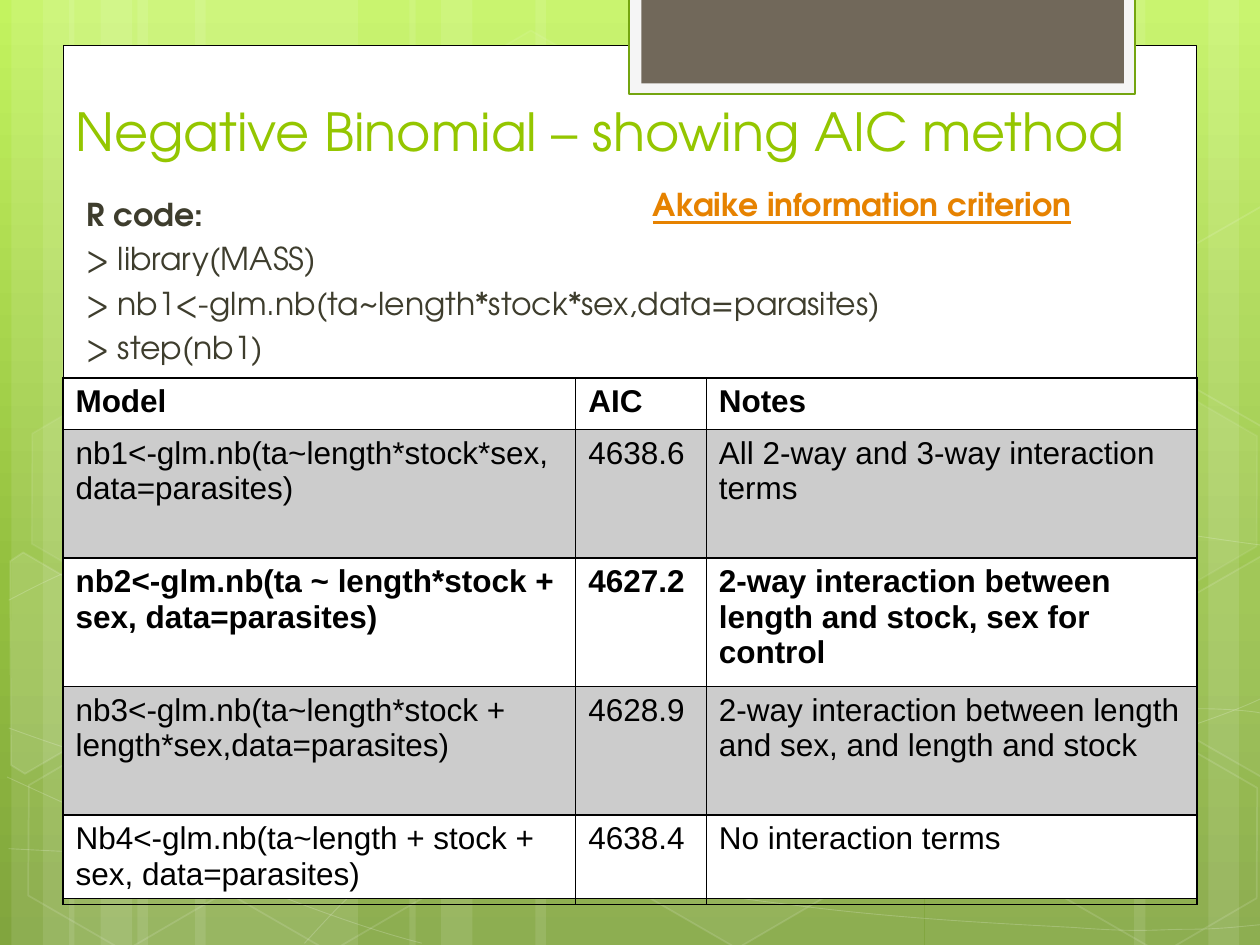
from copy import deepcopy
from math import cos, radians, sin

from lxml import etree
from pptx import Presentation
from pptx.dml.color import RGBColor
from pptx.enum import shapes, text
from pptx.oxml.ns import qn
from pptx.util import Pt

WHITE, BLACK = RGBColor(0xFF, 0xFF, 0xFF), RGBColor(0, 0, 0)
GREEN, DARK_GREEN = RGBColor(0x94, 0xC6, 0x00), RGBColor(0x74, 0xA5, 0x10)
OLIVE, ORANGE = RGBColor(0x3E, 0x3D, 0x2D), RGBColor(0xE6, 0x82, 0x00)
PALE, TAUPE = RGBColor(0xF5, 0xF5, 0xF5), RGBColor(0x71, 0x68, 0x5A)
BACKGROUND = [(0, RGBColor(0xC3, 0xF3, 0x5F)), (0.62, RGBColor(0x93, 0xBF, 0x3F)),
              (1, RGBColor(0x81, 0xA5, 0x3E))]
HEAD_FONT, TABLE_FONT = "TeX Gyre Adventor", "Arial"

TITLE = "Negative Binomial – showing AIC method"
CODE = ["R code:", "> library(MASS)",
        "> nb1<-glm.nb(ta~length*stock*sex,data=parasites)", "> step(nb1)"]
CALLOUT = "Akaike information criterion"
MODELS = [
    ("Model", "AIC", "Notes"),
    ("nb1<-glm.nb(ta~length*stock*sex, data=parasites)", "4638.6",
     "All 2-way and 3-way interaction terms"),
    ("nb2<-glm.nb(ta ~ length*stock + sex, data=parasites)", "4627.2",
     "2-way interaction between length and stock, sex for control"),
    ("nb3<-glm.nb(ta~length*stock + length*sex,data=parasites)", "4628.9",
     "2-way interaction between length and sex, and length and stock"),
    ("Nb4<-glm.nb(ta~length + stock + sex, data=parasites)", "4638.4", "No interaction terms"),
]
BOLD_ROWS, SHADED_ROWS = {0, 2}, {1, 3}
COL_WIDTHS = [293, 74.6, 280.4]
ROW_HEIGHTS = [29.5, 73.4, 73.4, 73.4, 51.2]

# Stripes are (left, width)
STRIPES = [(78.5, 126), (6.5, 36), (24.5, 60), (111.5, 126), (39.5, 36), (57.5, 60),
           (528.5, 126), (690.5, 36), (648, 60), (306, 222), (234, 36), (252, 60)]
# Cubic curves: a start point, then two handles and an end point per segment
CURVES = [
    [(5, 485), (44, 487), (83, 489), (137, 488), (191, 487), (258, 486), (330, 479),
     (402, 472), (504, 458), (570, 444), (636, 431), (703, 409), (725, 397)],
    [(5, 343), (26, 332), (47, 321), (87, 310), (128, 300), (186, 284), (250, 279),
     (314, 274), (392, 273), (471, 279), (550, 284), (682, 307), (725, 312)],
    [(4, 444), (91, 484), (178, 523), (241, 539)],
    [(5, 416), (27, 424), (50, 432), (92, 444), (134, 454), (197, 472), (257, 485),
     (317, 497), (392, 510), (452, 517), (512, 525), (576, 528), (614, 530),
     (652, 533), (662, 531), (680, 531), (699, 531), (712, 529), (725, 528)],
    [(174, 539), (187, 525), (200, 510), (217, 498), (235, 484), (259, 470), (279, 460),
     (300, 450), (312, 446), (338, 438), (364, 431), (413, 421), (438, 416),
     (464, 411), (467, 411), (490, 410), (512, 408), (547, 405), (572, 405),
     (596, 404), (638, 405), (638, 405), (660, 405), (670, 405), (686, 405),
     (699, 405), (711, 406), (718, 407), (722, 408), (724, 407), (724, 408)],
]
# Hexagons are (left, top, fill opacity, line opacity) in percent
TILT = 30
HEXAGONS = [(240.5, 26, 4, 8), (358, 424, 6, 12), (8, 425.5, 0, 12), (10, 224.5, 7, 8),
            (125.5, 426, 0, 12), (542, 326, 10, 12), (600.5, 427, 0, 12), (600.5, 226, 7, 8)]
# Hexagons cut off by the slide edge are (centre, corners, fill opacity)
CUT_HEXAGONS = [
    ((26, 386), [(6, 320.5), (13.5, 315.5), (69, 348), (68.5, 410.5), (14.5, 442),
                 (6.5, 437)], 10),
    ((709, 374.5), [(666.5, 349), (721.5, 317.5), (726.5, 321), (726.5, 441.5),
                    (721.5, 444), (666.5, 412.5)], 4),
    ((709, 173.5), [(666.5, 149), (721.5, 117.5), (727, 121), (726.5, 241),
                    (721.5, 244), (666.5, 212.5)], 0),
]
# Panel and tab are (left, top, width, height, fill, line, line width)
PANELS = [(36, 26, 648, 487.5, WHITE, BLACK, 0.5),
          (359.3, -1.4, 289.5, 55.4, PALE, DARK_GREEN, 1.25),
          (366.5, -1.4, 275.8, 49, TAUPE, None, 0)]


def set_alpha(fill, percent):
    color = fill._xPr.find(qn("a:solidFill"))[0]
    etree.SubElement(color, qn("a:alpha"), val=str(percent * 1000))


def paint(sp, fill=None, opacity=100, line=None, width=1, line_opacity=100):
    sp.shadow.inherit = False
    if line is not None:
        sp.line.width = Pt(width)
    for part, color, alpha in ((sp.fill, fill, opacity), (sp.line.fill, line, line_opacity)):
        if color is None or alpha == 0:
            part.background()
            continue
        part.solid()
        part.fore_color.rgb = color
        if alpha < 100:
            set_alpha(part, alpha)


def add_preset(kind, x, y, w, h, **style):
    sp = s.shapes.add_shape(kind, Pt(x), Pt(y), Pt(w), Pt(h))
    paint(sp, **style)
    return sp


def add_outline(points, close, **style):
    pts = [(Pt(x), Pt(y)) for x, y in points]
    builder = s.shapes.build_freeform(*pts[0])
    builder.add_line_segments(pts[1:], close=close)
    sp = builder.convert_to_shape()
    paint(sp, **style)
    return sp


def bend(sp):
    """Turn every three straight segments into one cubic segment."""
    lines = list(sp._element.iter(qn("a:lnTo")))
    for first, second, end in zip(lines[::3], lines[1::3], lines[2::3]):
        first.tag = qn("a:cubicBezTo")
        for line in (second, end):
            first.append(line[0])
            line.getparent().remove(line)


def turn_back(point, centre):
    dx, dy = point[0] - centre[0], point[1] - centre[1]
    c, n = cos(radians(TILT)), sin(radians(TILT))
    return centre[0] + dx * c + dy * n, centre[1] - dx * n + dy * c


def add_run(p, words, font, size, color, bold=False):
    r = p.add_run()
    r.text = words
    r.font.name, r.font.size, r.font.bold = font, Pt(size), bold
    r.font.color.rgb = color
    return r


def place(sp, x, y, w, h):
    s.shapes._spTree.append(sp._element)
    sp.left, sp.top, sp.width, sp.height = Pt(x), Pt(y), Pt(w), Pt(h)
    sp.text_frame.word_wrap = True
    sp.text_frame.auto_size = text.MSO_AUTO_SIZE.NONE
    return sp.text_frame


prs = Presentation()
prs.slide_width, prs.slide_height = Pt(720), Pt(540)
s = prs.slides.add_slide(prs.slide_layouts[1])

fill = s.background.fill
fill.gradient()
fill.gradient_angle = 270
stops = s._element.find(".//" + qn("a:gsLst"))
stops.append(deepcopy(stops[-1]))
for stop, (position, color) in zip(fill.gradient_stops, BACKGROUND):
    stop.position, stop.color.rgb = position, color

for x, w in STRIPES:
    add_preset(shapes.MSO_SHAPE.RECTANGLE, x, 0, w, 540, fill=WHITE, opacity=10)
for curve in CURVES:
    bend(add_outline(curve, False, line=WHITE, width=0.5, line_opacity=20))
for x, y, opacity, line_opacity in HEXAGONS:
    sp = add_preset(shapes.MSO_SHAPE.HEXAGON, x, y, 126, 109.5, fill=WHITE, opacity=opacity,
                    line=WHITE, line_opacity=line_opacity)
    sp.rotation, sp.adjustments[0] = TILT, 0.285
for centre, corners, opacity in CUT_HEXAGONS:
    sp = add_outline([turn_back(corner, centre) for corner in corners], True, fill=WHITE,
                     opacity=opacity, line=WHITE, line_opacity=12)
    sp.rotation = TILT
for x, y, w, h, color, line, width in PANELS:
    add_preset(shapes.MSO_SHAPE.RECTANGLE, x, y, w, h, fill=color, line=line, width=width)

tf = place(s.shapes.title, 36, 36, 648, 60)
tf.vertical_anchor = text.MSO_ANCHOR.BOTTOM
tf.paragraphs[0].alignment = text.PP_ALIGN.LEFT
add_run(tf.paragraphs[0], TITLE, HEAD_FONT, 30, GREEN)

tf = place(s.placeholders[1], 42, 108, 642, 276.5)
for i, line in enumerate(CODE):
    p = tf.add_paragraph() if i else tf.paragraphs[0]
    p.space_before = Pt(3.6)
    pr = p._p.get_or_add_pPr()
    pr.set("marL", "0")
    pr.set("indent", "0")
    etree.SubElement(pr, qn("a:buNone"))
    add_run(p, line, HEAD_FONT, 18, OLIVE, bold=i == 0)

table = s.shapes.add_table(len(MODELS), len(COL_WIDTHS), Pt(36), Pt(216),
                           Pt(sum(COL_WIDTHS)), Pt(sum(ROW_HEIGHTS))).table
for col, w in zip(table.columns, COL_WIDTHS):
    col.width = Pt(w)
for i, (row, h) in enumerate(zip(table.rows, ROW_HEIGHTS)):
    row.height = Pt(h)
    for cell, words in zip(row.cells, MODELS[i]):
        for side in ("lnL", "lnR", "lnT", "lnB"):
            ln = etree.SubElement(cell._tc.get_or_add_tcPr(), qn("a:" + side), w=str(Pt(1)))
            etree.SubElement(etree.SubElement(ln, qn("a:solidFill")), qn("a:srgbClr"),
                             val=str(BLACK))
        cell.fill.background()
        if i in SHADED_ROWS:
            cell.fill.solid()
            cell.fill.fore_color.rgb = BLACK
            set_alpha(cell.fill, 20)
        add_run(cell.text_frame.paragraphs[0], words, TABLE_FONT, 18, BLACK, i in BOLD_ROWS)

tf = s.shapes.add_textbox(Pt(366), Pt(102), Pt(258.5), Pt(29)).text_frame
tf.word_wrap = False
tf.auto_size = text.MSO_AUTO_SIZE.SHAPE_TO_FIT_TEXT
add_run(tf.paragraphs[0], CALLOUT, HEAD_FONT, 18, ORANGE, bold=True).font.underline = True

prs.save("out.pptx")
